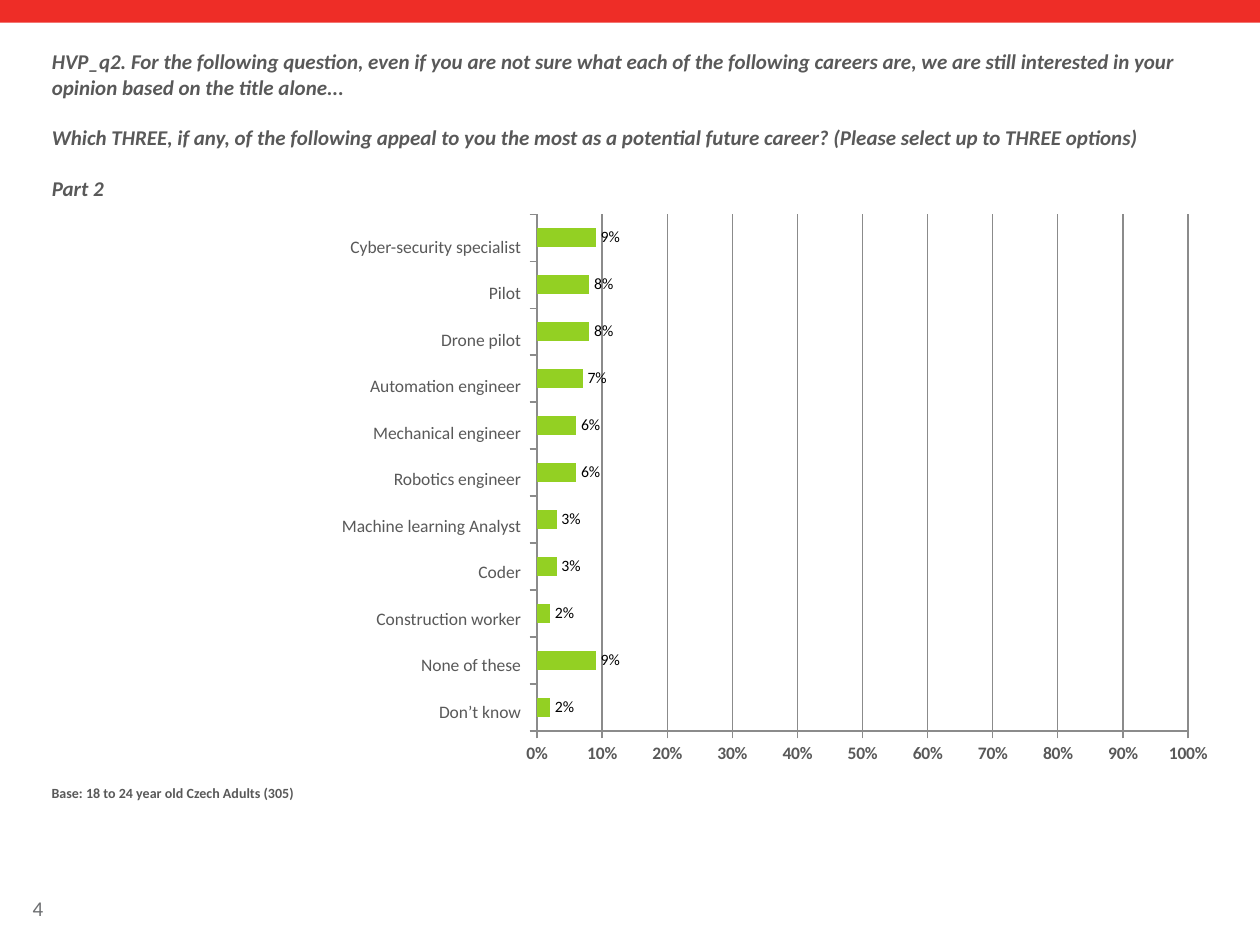
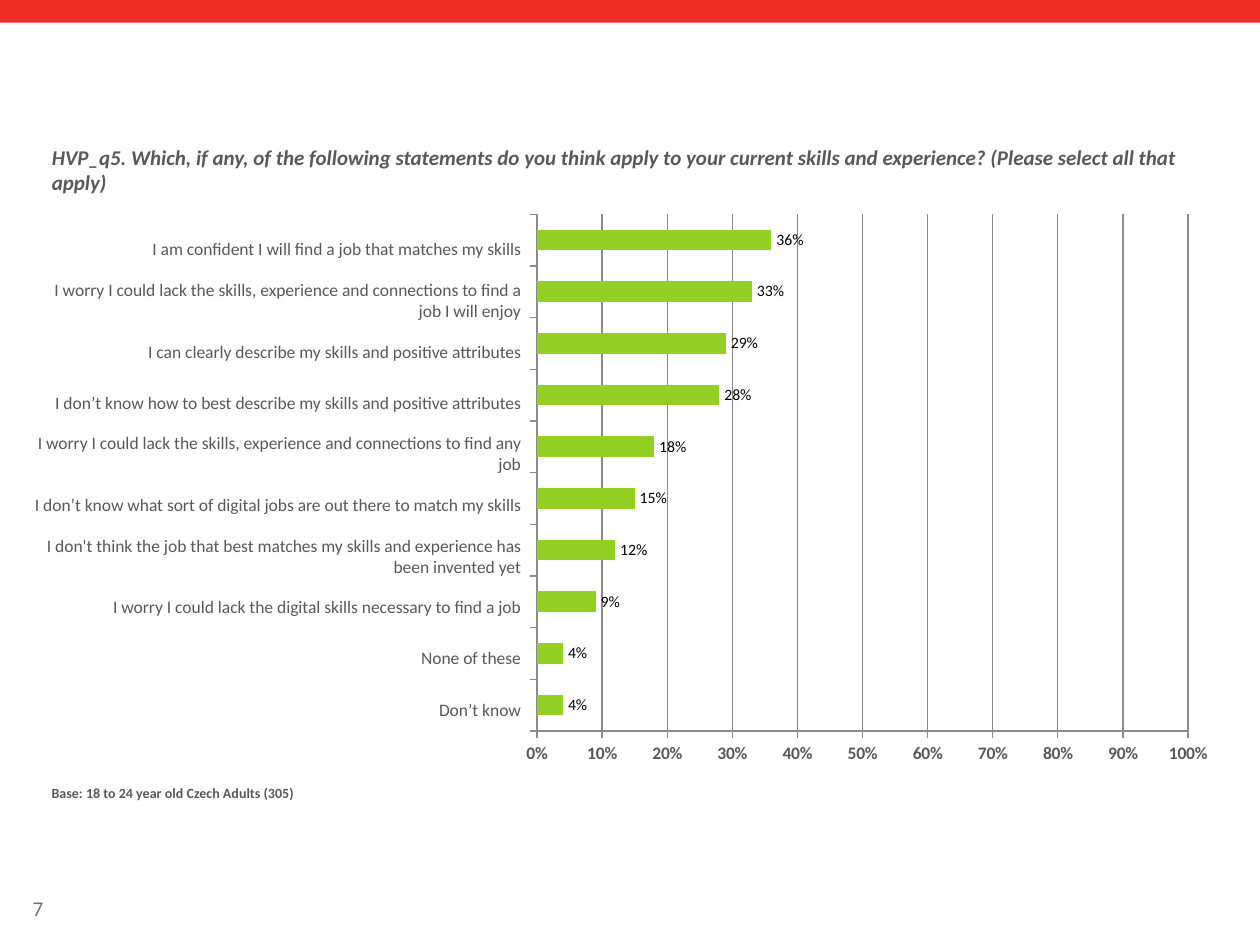
"""Build two survey slides, each with a question, a bar chart and aligned answer labels."""
from dataclasses import dataclass

from lxml.etree import SubElement
from pptx import Presentation
from pptx.chart.chart import Chart
from pptx.chart.data import CategoryChartData
from pptx.dml.color import RGBColor
from pptx.enum.chart import XL_CHART_TYPE as ChartType
from pptx.enum.chart import XL_LABEL_POSITION as LabelPosition
from pptx.enum.chart import XL_TICK_LABEL_POSITION as TickLabels
from pptx.enum.chart import XL_TICK_MARK as TickMark
from pptx.enum.shapes import MSO_SHAPE as Preset
from pptx.enum.text import MSO_ANCHOR as Anchor
from pptx.enum.text import MSO_AUTO_SIZE as AutoSize
from pptx.enum.text import PP_ALIGN as Align
from pptx.oxml.ns import qn
from pptx.slide import Slide
from pptx.text.text import Font, TextFrame
from pptx.util import Cm, Pt

RED, GREEN, BLACK = "EE2D27", "93D023", "000000"
TEXT_GREY, PAGE_GREY, LINE_GREY = "595959", "6D6F71", "8B8B8B"
FONT, CHART_FONT = "Calibri", "Manrope"
TITLE_ONLY = 5
PAGE_WIDTH, PAGE_HEIGHT = 25.4, 19.05
TEXT_LEFT, TEXT_WIDTH = 0.79, 23.85
CHART_LEFT, CHART_TOP, CHART_WIDTH, CHART_HEIGHT = 10.34, 4.09, 14.3, 11.51
LABEL_LEFT, LABEL_TOP, LABEL_WIDTH, LABELS_HEIGHT = 0.41, 4.5, 10.34, 10.31
PLOT_LAYOUT = {"x": 0.034, "y": 0.02, "w": 0.918, "h": 0.905}
BASE = "Base: 18 to 24 year old Czech Adults (305)"


@dataclass(frozen=True)
class Answer:
    """One survey answer and its share of respondents."""
    label: str
    share: float


@dataclass(frozen=True)
class Question:
    """One survey question with its answers from top to bottom."""
    page: int
    title_height: float
    wording: tuple[str, ...]
    answers: tuple[Answer, ...]


@dataclass(frozen=True)
class TextStyle:
    """Look and alignment of one kind of text."""
    size: float
    color: str = TEXT_GREY
    bold: bool = False
    italic: bool = False
    align: Align = Align.LEFT
    anchor: Anchor = Anchor.TOP
    auto_size: AutoSize = AutoSize.NONE


TITLE = TextStyle(12, bold=True, italic=True)
LABEL = TextStyle(10, align=Align.RIGHT, anchor=Anchor.MIDDLE, auto_size=AutoSize.SHAPE_TO_FIT_TEXT)
NOTE = TextStyle(8, bold=True)
PAGE_NUMBER = TextStyle(12, PAGE_GREY, anchor=Anchor.MIDDLE)

QUESTIONS = (
    Question(4, 3.23, (
        "HVP_q2. For the following question, even if you are not sure what each of the following "
        "careers are, we are still interested in your opinion based on the title alone...",
        "Which THREE, if any, of the following appeal to you the most as a potential future career? "
        "(Please select up to THREE options)",
        "Part 2",
    ), (
        Answer("Cyber-security specialist", 0.09),
        Answer("Pilot", 0.08),
        Answer("Drone pilot", 0.08),
        Answer("Automation engineer", 0.07),
        Answer("Mechanical engineer", 0.06),
        Answer("Robotics engineer", 0.06),
        Answer("Machine learning Analyst", 0.03),
        Answer("Coder", 0.03),
        Answer("Construction worker", 0.02),
        Answer("None of these", 0.09),
        Answer("Don’t know", 0.02),
    )),
    Question(7, 1.3, (
        "HVP_q5. Which, if any, of the following statements do you think apply to your current "
        "skills and experience? (Please select all that apply)",
    ), (
        Answer("I am confident I will find a job that matches my skills", 0.36),
        Answer("I worry I could lack the skills, experience and connections to find a job I will enjoy", 0.33),
        Answer("I can clearly describe my skills and positive attributes", 0.29),
        Answer("I don’t know how to best describe my skills and positive attributes", 0.28),
        Answer("I worry I could lack the skills, experience and connections to find any job", 0.18),
        Answer("I don’t know what sort of digital jobs are out there to match my skills", 0.15),
        Answer("I don't think the job that best matches my skills and experience has been invented yet", 0.12),
        Answer("I worry I could lack the digital skills necessary to find a job", 0.09),
        Answer("None of these", 0.04),
        Answer("Don’t know", 0.04),
    )),
)


def rgb(color: str) -> RGBColor:
    return RGBColor.from_string(color)


def set_font(font: Font, size: float, color: str, bold: bool = False,
             italic: bool = False, name: str = FONT) -> None:
    font.name, font.size, font.bold, font.italic = name, Pt(size), bold, italic
    font.color.rgb = rgb(color)


def write(frame: TextFrame, lines: tuple[str, ...], style: TextStyle) -> None:
    frame.word_wrap = True
    frame.auto_size = style.auto_size
    frame.vertical_anchor = style.anchor
    for index, line in enumerate(lines):
        para = frame.add_paragraph() if index else frame.paragraphs[0]
        para.alignment = style.align
        para.space_before = Pt(14.5 if index else 0)
        span = para.add_run()
        span.text = line
        set_font(span.font, style.size, style.color, style.bold, style.italic)


def add_text(page: Slide, left: float, top: float, width: float, height: float,
             text: str, style: TextStyle) -> None:
    box = page.shapes.add_textbox(Cm(left), Cm(top), Cm(width), Cm(height))
    write(box.text_frame, (text,), style)


def add_frame(page: Slide, number: int) -> None:
    band = page.shapes.add_shape(Preset.RECTANGLE, 0, 0, Cm(PAGE_WIDTH), Cm(0.46))
    band.shadow.inherit = False
    band.fill.solid()
    band.fill.fore_color.rgb = rgb(RED)
    band.line.fill.background()
    add_text(page, LABEL_LEFT, 17.93, 1.96, 0.76, str(number), PAGE_NUMBER)


def add_title(page: Slide, question: Question) -> None:
    title = page.shapes.title
    title.left, title.top = Cm(TEXT_LEFT), Cm(CHART_TOP - question.title_height)
    title.width, title.height = Cm(TEXT_WIDTH), Cm(question.title_height)
    write(title.text_frame, question.wording, TITLE)


def fix_plot_area(chart: Chart) -> None:
    plot_area = chart.element.chart.plotArea
    for old_layout in plot_area.findall(qn("c:layout")):
        plot_area.remove(old_layout)
    layout = SubElement(plot_area, qn("c:layout"))
    plot_area.insert(0, layout)
    manual = SubElement(layout, qn("c:manualLayout"))
    settings = {"layoutTarget": "inner", "xMode": "edge", "yMode": "edge", **PLOT_LAYOUT}
    for name, value in settings.items():
        SubElement(manual, qn(f"c:{name}")).set("val", str(value))


def style_axes(chart: Chart) -> None:
    categories, values = chart.category_axis, chart.value_axis
    values.minimum_scale, values.maximum_scale, values.major_unit = 0, 1, 0.1
    values.has_major_gridlines = True
    values.tick_labels.number_format = "0%"
    values.tick_labels.number_format_is_linked = False
    values.tick_label_position = TickLabels.LOW
    categories.has_major_gridlines = False
    categories.tick_label_position = TickLabels.NONE
    for axis in (categories, values):
        axis.major_tick_mark, axis.minor_tick_mark = TickMark.OUTSIDE, TickMark.NONE
        set_font(axis.tick_labels.font, 10, TEXT_GREY, bold=axis is values)
    for item in (categories, values, values.major_gridlines):
        item.format.line.color.rgb = rgb(LINE_GREY)
        item.format.line.width = Pt(0.75)


def add_bars(page: Slide, answers: tuple[Answer, ...]) -> None:
    data = CategoryChartData()
    data.categories = [str(number) for number in range(1, len(answers) + 1)]
    data.add_series("Series 1", [answer.share for answer in reversed(answers)])
    chart = page.shapes.add_chart(ChartType.BAR_CLUSTERED, Cm(CHART_LEFT), Cm(CHART_TOP),
                                  Cm(CHART_WIDTH), Cm(CHART_HEIGHT), data).chart
    chart.has_legend = chart.has_title = False
    set_font(chart.font, 18, PAGE_GREY, name=CHART_FONT)
    fix_plot_area(chart)
    style_axes(chart)
    plot = chart.plots[0]
    plot.vary_by_categories = False
    plot.gap_width, plot.overlap = 150, -10
    series = plot.series[0]
    series.invert_if_negative = False
    series.format.fill.solid()
    series.format.fill.fore_color.rgb = rgb(GREEN)
    labels = series.data_labels
    labels.show_value = True
    labels.position = LabelPosition.OUTSIDE_END
    labels.number_format, labels.number_format_is_linked = "0%", False
    set_font(labels.font, 9, BLACK)


def add_answer_labels(page: Slide, answers: tuple[Answer, ...]) -> None:
    row_height = LABELS_HEIGHT / len(answers)
    for row, answer in enumerate(answers):
        add_text(page, LABEL_LEFT, LABEL_TOP + row * row_height, LABEL_WIDTH, row_height,
                 answer.label, LABEL)


def main() -> None:
    deck = Presentation()
    deck.slide_width, deck.slide_height = Cm(PAGE_WIDTH), Cm(PAGE_HEIGHT)
    for question in QUESTIONS:
        page = deck.slides.add_slide(deck.slide_layouts[TITLE_ONLY])
        add_frame(page, question.page)
        add_title(page, question)
        add_bars(page, question.answers)
        add_answer_labels(page, question.answers)
        add_text(page, TEXT_LEFT, 15.7, TEXT_WIDTH, 1.09, BASE, NOTE)
    deck.save("out.pptx")


if __name__ == "__main__":
    main()
